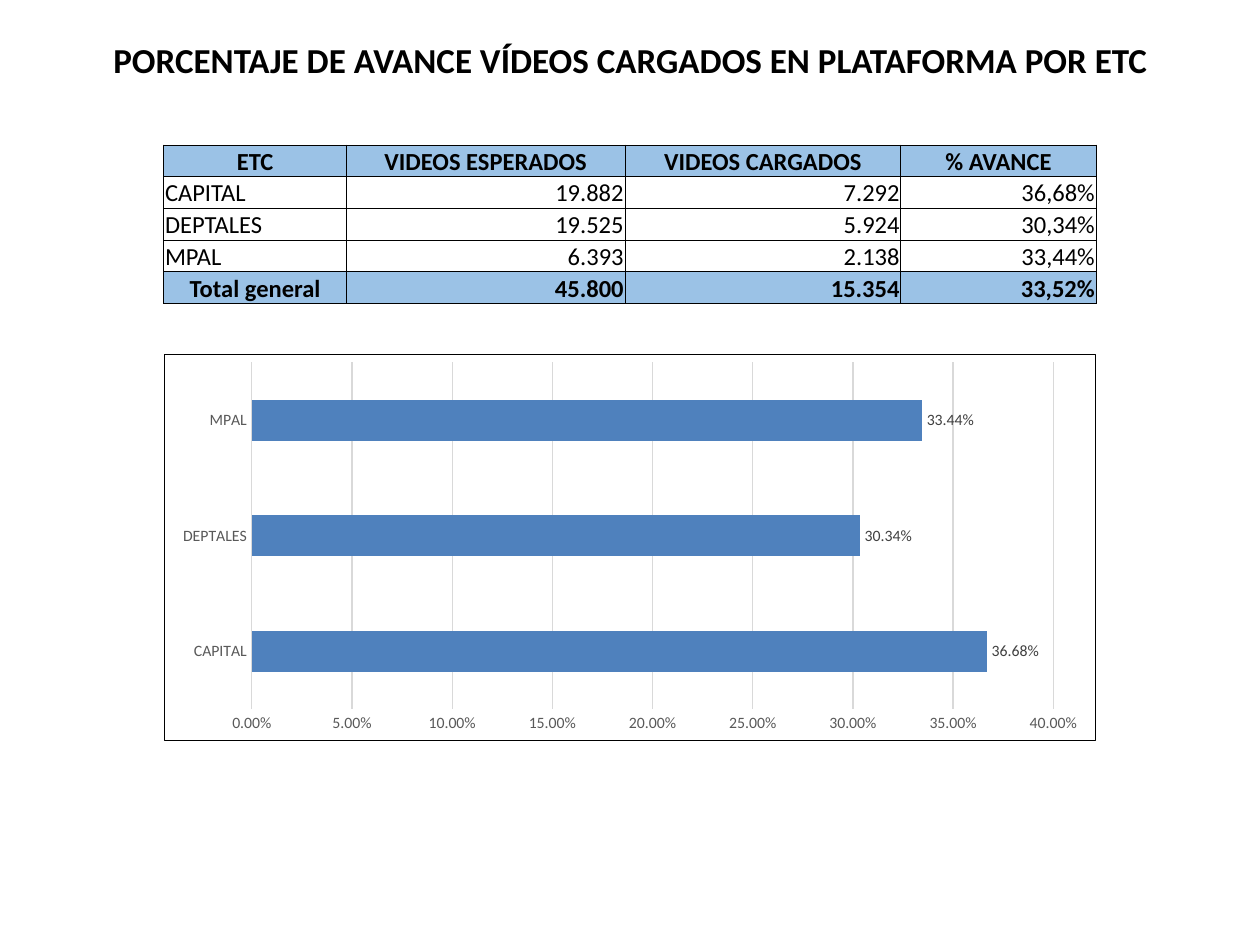
from lxml.etree import SubElement
from pptx import Presentation
from pptx.chart.data import CategoryChartData
from pptx.dml.color import RGBColor
from pptx.enum.chart import XL_CHART_TYPE as ChartType, XL_LABEL_POSITION as LabelPosition, XL_TICK_MARK as TickMark
from pptx.enum.shapes import MSO_SHAPE as ShapeKind
from pptx.enum.text import MSO_ANCHOR as Anchor, PP_ALIGN as Align
from pptx.oxml import parse_xml
from pptx.oxml.ns import nsdecls, qn
from pptx.util import Inches, Pt

COLORS = {
    "black": "000000",
    "white": "FFFFFF",
    "band": "9BC2E6",
    "bar": "4F81BD",
    "grid": "D9D9D9",
    "axis": "595959",
    "label": "404040",
}
FONT = "Calibri"
TITLE = "PORCENTAJE DE AVANCE VÍDEOS CARGADOS EN PLATAFORMA POR ETC"
COLUMN_WIDTHS = [1.45, 2.21, 2.19, 1.55]
ROWS = [
    ["ETC", "VIDEOS ESPERADOS", "VIDEOS CARGADOS", "% AVANCE"],
    ["CAPITAL", "19.882", "7.292", "36,68%"],
    ["DEPTALES", "19.525", "5.924", "30,34%"],
    ["MPAL", "6.393", "2.138", "33,44%"],
    ["Total general", "45.800", "15.354", "33,52%"],
]
PROGRESS = {"CAPITAL": 0.3668, "DEPTALES": 0.3034, "MPAL": 0.3344}


def color(name):
    return RGBColor.from_string(COLORS[name])


def style_font(font, size, color_name, bold=False):
    font.name = FONT
    font.size = Pt(size)
    font.bold = bold
    font.color.rgb = color(color_name)


def add_text(frame, text, size, align, bold):
    paragraph = frame.paragraphs[0]
    paragraph.alignment = align
    run = paragraph.add_run()
    run.text = text
    style_font(run.font, size, "black", bold)


def add_title(slide, left, top, width, height):
    shape = slide.shapes.add_shape(
        ShapeKind.ROUND_2_DIAG_RECTANGLE, left, top, width, height)
    shape.shadow.inherit = False
    shape.fill.solid()
    shape.fill.fore_color.rgb = color("white")
    shape.line.fill.background()
    shape.text_frame.word_wrap = True
    shape.text_frame.vertical_anchor = Anchor.MIDDLE
    add_text(shape.text_frame, TITLE, 20, Align.CENTER, True)


def add_borders(cell):
    properties = cell._tc.get_or_add_tcPr()
    for side in ("a:lnL", "a:lnR", "a:lnT", "a:lnB"):
        line = SubElement(properties, qn(side), w=str(Pt(0.5)))
        fill = SubElement(line, qn("a:solidFill"))
        SubElement(fill, qn("a:srgbClr"), val=COLORS["black"])


def add_progress_table(slide, left, top, width, height):
    table = slide.shapes.add_table(
        len(ROWS), len(COLUMN_WIDTHS), left, top, width, height).table
    table.horz_banding = False
    for column, column_width in zip(table.columns, COLUMN_WIDTHS):
        column.width = Inches(column_width)
    for row_index, texts in enumerate(ROWS):
        table.rows[row_index].height = height // len(ROWS)
        is_header = row_index == 0
        is_band = is_header or row_index == len(ROWS) - 1
        for column_index, text in enumerate(texts):
            cell = table.cell(row_index, column_index)
            cell.margin_left = cell.margin_right = cell.margin_top = Inches(0.01)
            cell.margin_bottom = 0
            cell.vertical_anchor = Anchor.BOTTOM
            add_borders(cell)
            if is_band:
                cell.fill.solid()
                cell.fill.fore_color.rgb = color("band")
            else:
                cell.fill.background()
            if is_header or (is_band and column_index == 0):
                align = Align.CENTER
            else:
                align = Align.RIGHT if column_index else Align.LEFT
            add_text(cell.text_frame, text, 14, align, is_band)


def add_chart_border(chart):
    border = parse_xml(
        f'<c:spPr {nsdecls("c", "a")}><a:noFill/><a:ln w="{Pt(0.75)}"><a:solidFill>'
        f'<a:srgbClr val="{COLORS["black"]}"/></a:solidFill></a:ln></c:spPr>')
    chart._chartSpace.find(qn("c:chart")).addnext(border)


def style_line(line):
    line.color.rgb = color("grid")
    line.width = Pt(0.75)


def add_progress_chart(slide, left, top, width, height):
    data = CategoryChartData(number_format="0.00%")
    data.categories = list(PROGRESS)
    data.add_series("Series 1", list(PROGRESS.values()))
    chart = slide.shapes.add_chart(
        ChartType.BAR_CLUSTERED, left, top, width, height, data).chart
    chart.has_legend = False
    chart.has_title = False
    style_font(chart.font, 10, "black")
    add_chart_border(chart)

    for axis in (chart.category_axis, chart.value_axis):
        axis.major_tick_mark = axis.minor_tick_mark = TickMark.NONE
        style_font(axis.tick_labels.font, 9, "axis")
    style_line(chart.category_axis.format.line)

    value_axis = chart.value_axis
    value_axis.minimum_scale = 0
    value_axis.maximum_scale = 0.4
    value_axis.major_unit = 0.05
    value_axis.format.line.fill.background()
    value_axis.has_major_gridlines = True
    style_line(value_axis.major_gridlines.format.line)
    value_axis.tick_labels.number_format = "0.00%"
    value_axis.tick_labels.number_format_is_linked = False

    plot = chart.plots[0]
    plot.gap_width = 182
    plot.vary_by_categories = False
    series = plot.series[0]
    series.format.fill.solid()
    series.format.fill.fore_color.rgb = color("bar")
    labels = series.data_labels
    labels.show_value = True
    labels.number_format = "0.00%"
    labels.number_format_is_linked = False
    labels.position = LabelPosition.OUTSIDE_END
    style_font(labels.font, 9, "label")


def main():
    presentation = Presentation()
    presentation.slide_width = Inches(10)
    presentation.slide_height = Inches(7.5)
    slide = presentation.slides.add_slide(presentation.slide_layouts[6])
    add_title(slide, Inches(0.01), Inches(0.08), Inches(9.99), Inches(0.79))
    add_progress_table(slide, Inches(1.3), Inches(1.15), Inches(7.4), Inches(1.26))
    add_progress_chart(slide, Inches(1.3), Inches(2.81), Inches(7.4), Inches(3.07))
    presentation.save("out.pptx")


if __name__ == "__main__":
    main()
